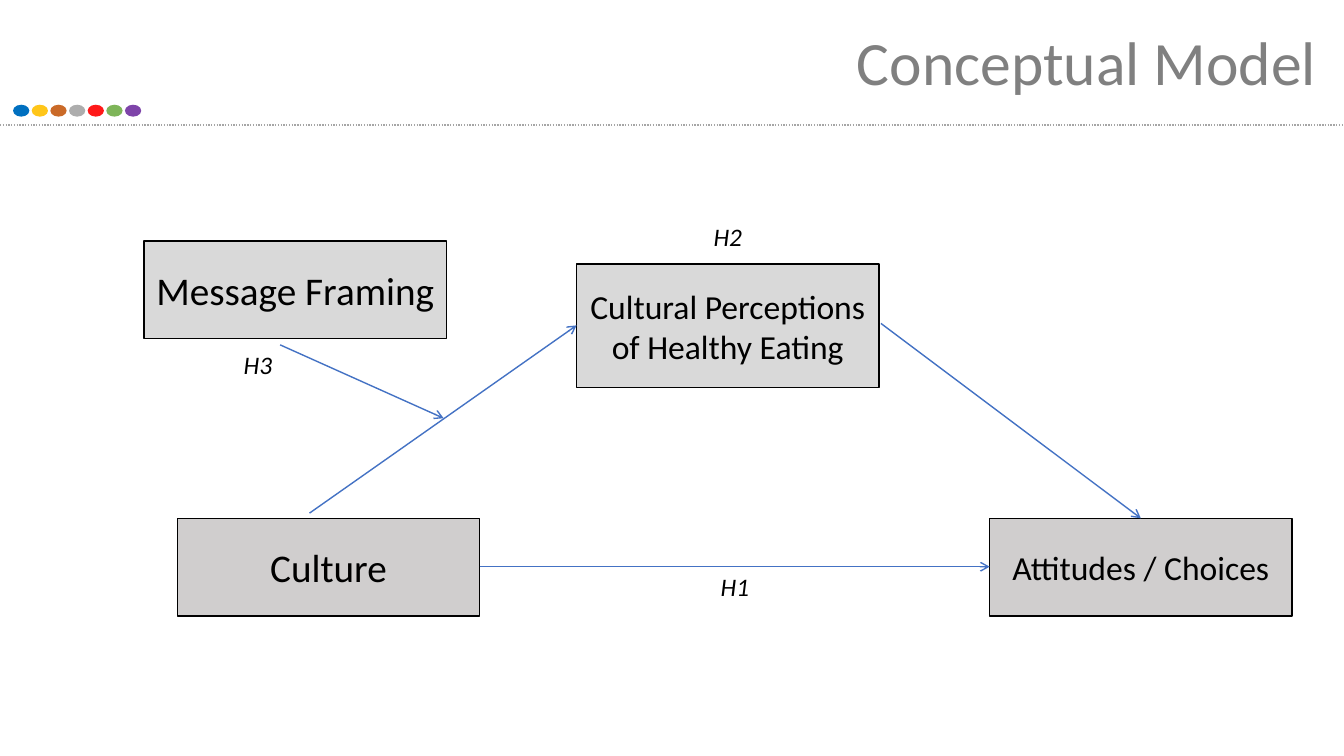
"""Build the Conceptual Model slide: four boxes, arrows and hypothesis labels."""
from lxml import etree
from pptx import Presentation
from pptx import util as u
from pptx.dml.color import RGBColor
from pptx.enum import dml, shapes, text
from pptx.oxml.ns import qn

FONT = "Calibri"
BLACK = "000000"
ARROW_BLUE = "4472C4"
BOX_WIDTH = 7.62
DOT_COLOURS = ["0070C0", "FFC000", "C55A11", "A5A5A5", "FF0000", "70AD47", "7030A0"]


def colour(hex_string):
    """Turn a hex string into a colour."""
    return RGBColor.from_string(hex_string)


def write(frame, lines, size, hex_string=BLACK, italic=None, align=text.PP_ALIGN.CENTER):
    """Write one paragraph per line into a text frame."""
    for index, line in enumerate(lines):
        paragraph = frame.add_paragraph() if index else frame.paragraphs[0]
        paragraph.alignment = align
        run = paragraph.add_run()
        run.text = line
        run.font.name = FONT
        run.font.size = u.Pt(size)
        run.font.italic = italic
        run.font.color.rgb = colour(hex_string)


def add_filled(slide, kind, left, top, width, height, fill):
    """Add a preset shape with a solid fill and no shadow."""
    shape = slide.shapes.add_shape(kind, u.Cm(left), u.Cm(top), u.Cm(width), u.Cm(height))
    shape.shadow.inherit = False
    shape.fill.solid()
    shape.fill.fore_color.rgb = colour(fill)
    return shape


def add_box(slide, left, top, height, fill, lines, size):
    """Add a black-outlined concept box."""
    shape = add_filled(slide, shapes.MSO_SHAPE.RECTANGLE, left, top, BOX_WIDTH, height, fill)
    shape.line.color.rgb = colour(BLACK)
    shape.line.width = u.Pt(1)
    shape.text_frame.word_wrap = True
    shape.text_frame.vertical_anchor = text.MSO_ANCHOR.MIDDLE
    write(shape.text_frame, lines, size)


def add_line(slide, start, end, hex_string):
    """Add a straight one-point line and return it."""
    connector = slide.shapes.add_connector(
        shapes.MSO_CONNECTOR.STRAIGHT, *(u.Cm(value) for value in start + end))
    connector.line.color.rgb = colour(hex_string)
    connector.line.width = u.Pt(1)
    etree.SubElement(connector.element.spPr, qn("a:effectLst"))
    return connector


def add_arrow(slide, start, end):
    """Add a line with an open arrowhead at its end."""
    connector = add_line(slide, start, end, ARROW_BLUE)
    etree.SubElement(connector.line._get_or_add_ln(), qn("a:tailEnd"), type="arrow")


def add_label(slide, left, top, label):
    """Add an italic hypothesis label."""
    frame = slide.shapes.add_textbox(u.Cm(left), u.Cm(top), u.Cm(1.88), u.Cm(1.02)).text_frame
    frame.word_wrap = True
    frame.auto_size = text.MSO_AUTO_SIZE.SHAPE_TO_FIT_TEXT
    write(frame, [label], 18, italic=True)


def add_dots(slide):
    """Add the row of coloured dots, all but the first slightly transparent."""
    for index, fill in enumerate(DOT_COLOURS):
        dot = add_filled(slide, shapes.MSO_SHAPE.OVAL, 0.33 + index * 0.47, 2.64, 0.41, 0.3, fill)
        dot.line.fill.background()
        if index:
            solid = dot.element.spPr.find(qn("a:solidFill"))
            etree.SubElement(solid[0], qn("a:alpha"), val="90000")


def set_title(slide, words):
    """Place and format the title placeholder."""
    title = slide.shapes.title
    title.left, title.top, title.width, title.height = map(u.Cm, (21.34, 0.48, 12.22, 2.13))
    frame = title.text_frame
    frame.word_wrap = False
    frame.auto_size = text.MSO_AUTO_SIZE.SHAPE_TO_FIT_TEXT
    frame.vertical_anchor = text.MSO_ANCHOR.TOP
    write(frame, [words], 44, "808080", align=text.PP_ALIGN.LEFT)


def main():
    """Build and save the slide."""
    presentation = Presentation()
    presentation.slide_width, presentation.slide_height = u.Cm(33.87), u.Cm(19.05)
    slide = presentation.slides.add_slide(presentation.slide_layouts[5])
    set_title(slide, "Conceptual Model")

    add_box(slide, 3.63, 6.07, 2.46, "D9D9D9", ["Message Framing"], 28)
    add_box(slide, 14.53, 6.65, 3.12, "D9D9D9", ["Cultural Perceptions", "of Healthy Eating"], 24)
    add_box(slide, 4.47, 13.06, 2.46, "D0CECE", ["Culture"], 28)
    add_box(slide, 24.94, 13.06, 2.46, "D0CECE", ["Attitudes / Choices"], 24)

    add_arrow(slide, (12.09, 14.28), (24.94, 14.28))
    add_arrow(slide, (7.8, 12.93), (14.53, 8.2))
    add_arrow(slide, (7.06, 8.69), (11.18, 10.54))
    add_arrow(slide, (22.2, 8.15), (28.75, 13.06))

    rule = add_line(slide, (0, 3.15), (33.87, 3.15), "A6A6A6")
    rule.line.dash_style = dml.MSO_LINE.ROUND_DOT
    add_dots(slide)

    add_label(slide, 17.58, 14.28, "H1")
    add_label(slide, 17.4, 5.46, "H2")
    add_label(slide, 5.56, 8.69, "H3")
    presentation.save("out.pptx")


if __name__ == "__main__":
    main()
